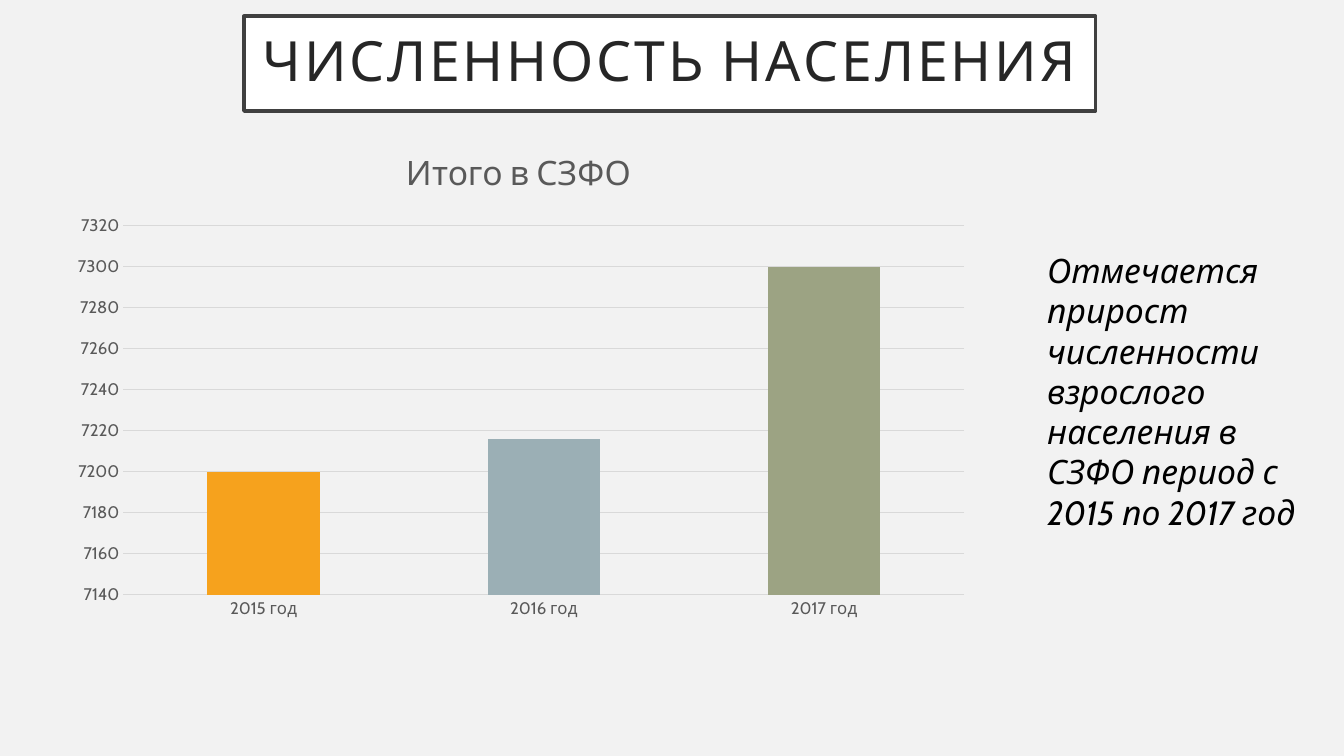
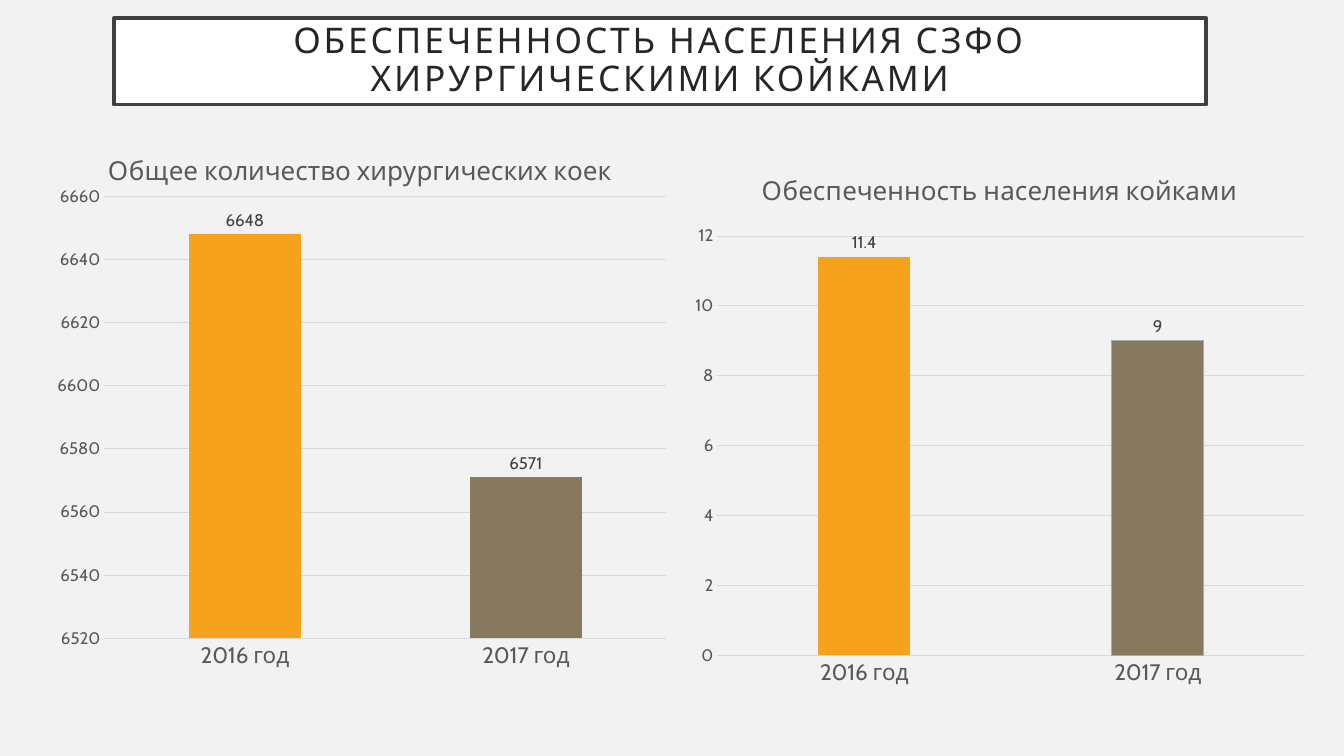
from dataclasses import dataclass

from lxml.etree import SubElement
from pptx import Presentation
from pptx.chart.data import CategoryChartData
from pptx.dml.color import RGBColor
from pptx.enum.chart import XL_CHART_TYPE, XL_LABEL_POSITION, XL_TICK_MARK
from pptx.enum.shapes import MSO_SHAPE
from pptx.enum.text import MSO_ANCHOR, PP_ALIGN
from pptx.oxml.ns import qn
from pptx.util import Cm, Pt


@dataclass(frozen=True)
class Theme:
    font: str = "Cabin"
    background: str = "F2F2F2"
    panel: str = "FFFFFF"
    frame: str = "404040"
    heading: str = "262626"
    body: str = "000000"
    muted: str = "595959"
    grid: str = "D9D9D9"
    orange: str = "F6A21D"
    blue: str = "9BAFB5"
    green: str = "9CA383"
    brown: str = "87795D"
    large_title: float = 39.6
    small_title: float = 25.2
    body_size: float = 24
    large_chart_title: float = 24
    small_chart_title: float = 18.6
    large_axis: float = 16
    small_axis: float = 12


class Deck:
    def __init__(self, theme):
        self.theme = theme
        self.presentation = Presentation()
        self.presentation.slide_width = Cm(33.87)
        self.presentation.slide_height = Cm(19.05)
        self.paint(self.presentation.slide_master.background.fill, theme.background)
        self.slide = None

    def add_slide(self):
        self.slide = self.presentation.slides.add_slide(self.presentation.slide_layouts[6])

    def paint(self, fill, color):
        fill.solid()
        fill.fore_color.rgb = RGBColor.from_string(color)

    def draw_line(self, line, color, width):
        line.color.rgb = RGBColor.from_string(color)
        line.width = Pt(width)

    def style_font(self, font, size, color, italic=False):
        font.name = self.theme.font
        font.size = Pt(size)
        font.bold = False
        font.italic = italic
        font.color.rgb = RGBColor.from_string(color)

    def add_title(self, text, box, size):
        shape = self.slide.shapes.add_shape(MSO_SHAPE.RECTANGLE, *map(Cm, box))
        shape.shadow.inherit = False
        self.paint(shape.fill, self.theme.panel)
        self.draw_line(shape.line, self.theme.frame, 2.5)
        frame = shape.text_frame
        frame.word_wrap = True
        frame.vertical_anchor = MSO_ANCHOR.MIDDLE
        frame.margin_left = frame.margin_right = Cm(0.4)
        frame.margin_top = frame.margin_bottom = Cm(0.5)
        paragraph = frame.paragraphs[0]
        paragraph.alignment = PP_ALIGN.CENTER
        paragraph.line_spacing = 0.9
        run = paragraph.add_run()
        run.text = text
        self.style_font(run.font, size, self.theme.heading)
        run.font._element.set("spc", "200")

    def add_text(self, text, box):
        frame = self.slide.shapes.add_textbox(*map(Cm, box)).text_frame
        frame.word_wrap = True
        paragraph = frame.paragraphs[0]
        paragraph.text = text
        self.style_font(paragraph.font, self.theme.body_size, self.theme.body, italic=True)

    def add_column_chart(self, title, box, values, colors, scale, plot_area, title_size,
                         category_size, gap=150, overlap=0, labels=False):
        data = CategoryChartData()
        data.categories = list(values)
        data.add_series(title, list(values.values()))
        chart = self.slide.shapes.add_chart(
            XL_CHART_TYPE.COLUMN_CLUSTERED, *map(Cm, box), data).chart
        chart.has_legend = False
        chart.has_title = True
        paragraph = chart.chart_title.text_frame.paragraphs[0]
        paragraph.text = title
        self.style_font(paragraph.font, title_size, self.theme.muted)
        self.style_axes(chart, scale, category_size)
        plot = chart.plots[0]
        plot.gap_width = gap
        plot.overlap = overlap
        plot.vary_by_categories = False
        for index, color in enumerate(colors):
            self.paint(plot.series[0].points[index].format.fill, color)
        if labels:
            plot.has_data_labels = True
            plot.data_labels.show_value = True
            plot.data_labels.position = XL_LABEL_POSITION.OUTSIDE_END
            self.style_font(plot.data_labels.font, self.theme.small_axis, self.theme.frame)
        self.place_plot(chart, plot_area)
        return chart

    def style_axes(self, chart, scale, category_size):
        category_axis, value_axis = chart.category_axis, chart.value_axis
        for axis, size in ((category_axis, category_size), (value_axis, self.theme.small_axis)):
            axis.major_tick_mark = axis.minor_tick_mark = XL_TICK_MARK.NONE
            self.style_font(axis.tick_labels.font, size, self.theme.muted)
        self.draw_line(category_axis.format.line, self.theme.grid, 0.75)
        value_axis.format.line.fill.background()
        self.draw_line(value_axis.major_gridlines.format.line, self.theme.grid, 0.75)
        value_axis.minimum_scale, value_axis.maximum_scale, value_axis.major_unit = scale

    def place_plot(self, chart, plot_area):
        area = chart._chartSpace.find(".//" + qn("c:plotArea"))
        for old_layout in area.findall(qn("c:layout")):
            area.remove(old_layout)
        layout = SubElement(area, qn("c:layout"))
        area.insert(0, layout)
        manual = SubElement(layout, qn("c:manualLayout"))
        settings = [("layoutTarget", "inner"), ("xMode", "edge"), ("yMode", "edge")]
        settings += zip("xywh", plot_area)
        for name, value in settings:
            SubElement(manual, qn("c:" + name)).set("val", str(value))


def build_population(deck):
    theme = deck.theme
    deck.add_slide()
    deck.add_column_chart(
        "Итого в СЗФО", (1.83, 3.15, 22.48, 15.54),
        {"2015 год": 7200, "2016 год": 7216, "2017 год": 7300},
        (theme.orange, theme.blue, theme.green), (7140, 7320, 20),
        (0.057, 0.163, 0.943, 0.599), theme.large_chart_title, theme.small_axis, overlap=-70)
    deck.add_title("ЧИСЛЕННОСТЬ НАСЕЛЕНИЯ", (6.15, 0.41, 21.46, 2.39), theme.large_title)
    deck.add_text(
        "Отмечается прирост численности взрослого населения в СЗФО период с 2015 по 2017 год",
        (26.14, 6.17, 7.06, 7.44))


def build_beds(deck):
    theme = deck.theme
    deck.add_slide()
    colors = (theme.orange, theme.brown)
    sizes = (theme.small_chart_title, theme.large_axis)
    deck.add_column_chart(
        "Общее количество хирургических коек", (0.94, 3.3, 16.26, 13.87),
        {"2016 год": 6648, "2017 год": 6571}, colors, (6520, 6660, 20),
        (0.104, 0.119, 0.871, 0.803), *sizes, labels=True)
    deck.add_title("ОБЕСПЕЧЕННОСТЬ НАСЕЛЕНИЯ СЗФО ХИРУРГИЧЕСКИМИ КОЙКАМИ",
                   (2.87, 0.46, 27.53, 2.18), theme.small_title)
    provision = deck.add_column_chart(
        "Обеспеченность населения койками", (17.2, 3.81, 15.98, 13.72),
        {"2016 год": 11.4, "2017 год": 9}, colors, (0, 12, 2),
        (0.055, 0.156, 0.926, 0.77), *sizes, gap=219, overlap=-27, labels=True)
    last_column = provision.plots[0].series[0].points[1]
    deck.draw_line(last_column.format.line, theme.blue, 0.75)


def main():
    deck = Deck(Theme())
    build_population(deck)
    build_beds(deck)
    deck.presentation.save("out.pptx")


if __name__ == "__main__":
    main()
